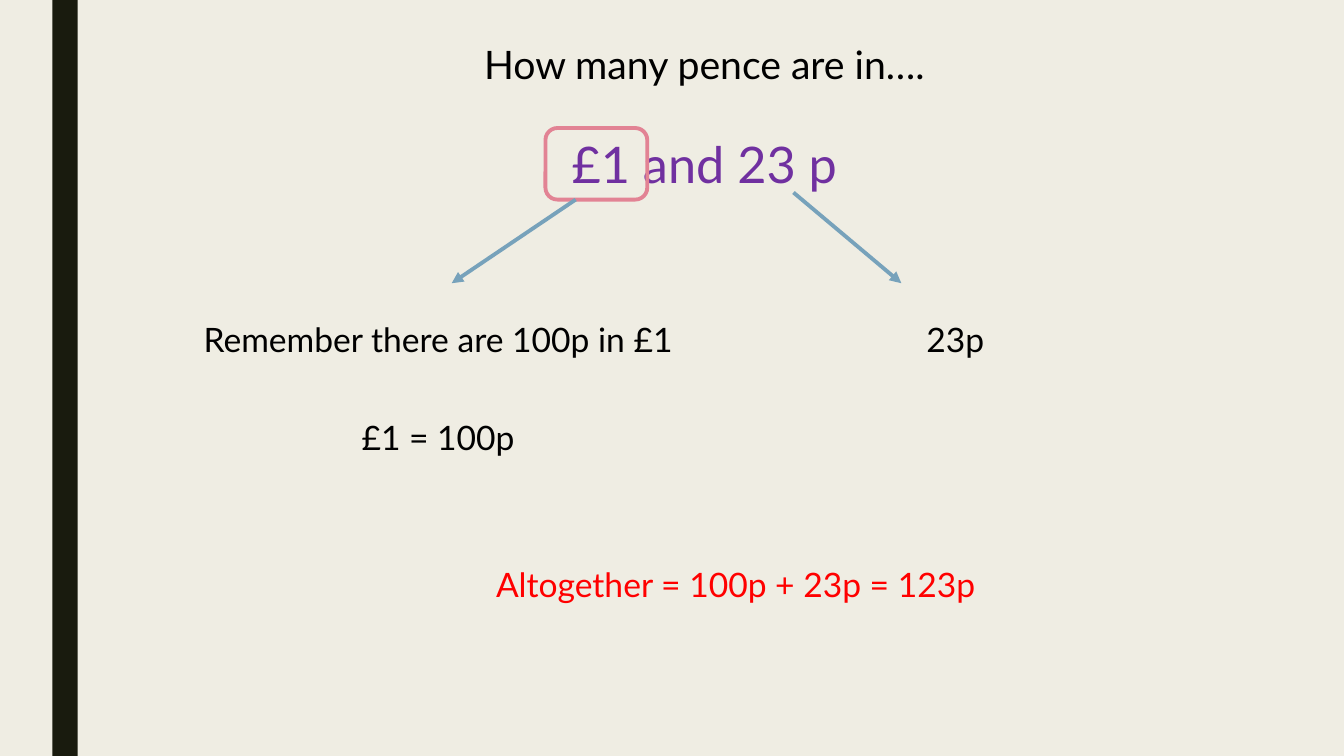
from lxml import etree
from pptx import Presentation
from pptx.dml.color import RGBColor
from pptx.enum.shapes import MSO_CONNECTOR as Link, MSO_SHAPE as Form
from pptx.enum.text import PP_ALIGN as Align
from pptx.oxml.ns import qn
from pptx.util import Inches, Pt

CREAM = RGBColor(0xEF, 0xED, 0xE3)
DARK = RGBColor(0x19, 0x1B, 0x0E)
BLACK = RGBColor(0, 0, 0)
PURPLE = RGBColor(0x70, 0x30, 0xA0)
RED = RGBColor(0xFF, 0, 0)
PINK = RGBColor(0xE2, 0x83, 0x94)
BLUE = RGBColor(0x77, 0xA2, 0xBB)

# Content and layout, in inches
WIDTH, HEIGHT = 13.33, 7.5
FULL, HALF = 10.59, 4.97
LEFT, RIGHT = 1.86, 6.99
ROW, STEP = 3.11, 0.98
FONT, STROKE = "Lato", 2.75

# text, left, top, width, height, size, colour
TEXTS = [
    ("How many pence are in….", 1.69, 0.35, FULL, 0.57, 28, BLACK),
    ("£1 and 23 p", 1.69, 1.27, FULL, 0.71, 36, PURPLE),
    ("Remember there are 100p in £1", LEFT, ROW, HALF, 0.5, 24, BLACK),
    ("£1 = 100p", LEFT, ROW + STEP, HALF, 0.5, 24, BLACK),
    ("23p", RIGHT, ROW, HALF, 0.5, 24, BLACK),
    ("Altogether = 100p + 23p = 123p", 2, 5.55, FULL, 0.5, 24, RED),
]
BAR = (0.52, 0, 0.25, HEIGHT)
FRAME = (5.41, 1.27, 1.01, 0.71)
ARROWS = [(5.71, 1.98, 4.48, 2.81), (7.87, 1.91, 8.94, 2.81)]


def units(nums):
    return [Inches(n) for n in nums]


def add_text(slide, text, left, top, width, height, size, color):
    box = slide.shapes.add_textbox(*units((left, top, width, height)))
    frame = box.text_frame
    frame.word_wrap = True
    frame.text = text
    para = frame.paragraphs[0]
    para.alignment = Align.CENTER
    font = para.runs[0].font
    font.name, font.size = FONT, Pt(size)
    font.color.rgb = color


def add_arrow(slide, ends):
    arrow = slide.shapes.add_connector(Link.STRAIGHT, *units(ends))
    arrow.line.color.rgb = BLUE
    arrow.line.width = Pt(STROKE)
    etree.SubElement(arrow.line._get_or_add_ln(), qn("a:tailEnd"), type="triangle")
    etree.SubElement(arrow._element.spPr, qn("a:effectLst"))


def main():
    deck = Presentation()
    deck.slide_width, deck.slide_height = units((WIDTH, HEIGHT))
    slide = deck.slides.add_slide(deck.slide_layouts[6])
    back = slide.background.fill
    back.solid()
    back.fore_color.rgb = CREAM

    # Side bar
    bar = slide.shapes.add_shape(Form.RECTANGLE, *units(BAR))
    bar.shadow.inherit = False
    bar.fill.solid()
    bar.fill.fore_color.rgb = DARK
    bar.line.fill.background()

    # Sum and its steps
    for item in TEXTS:
        add_text(slide, *item)

    # Frame around the pound
    ring = slide.shapes.add_shape(Form.ROUNDED_RECTANGLE, *units(FRAME))
    ring.shadow.inherit = False
    ring.fill.background()
    ring.line.color.rgb = PINK
    ring.line.width = Pt(STROKE)

    # Arrows to each part
    for ends in ARROWS:
        add_arrow(slide, ends)

    deck.save("out.pptx")


if __name__ == "__main__":
    main()
